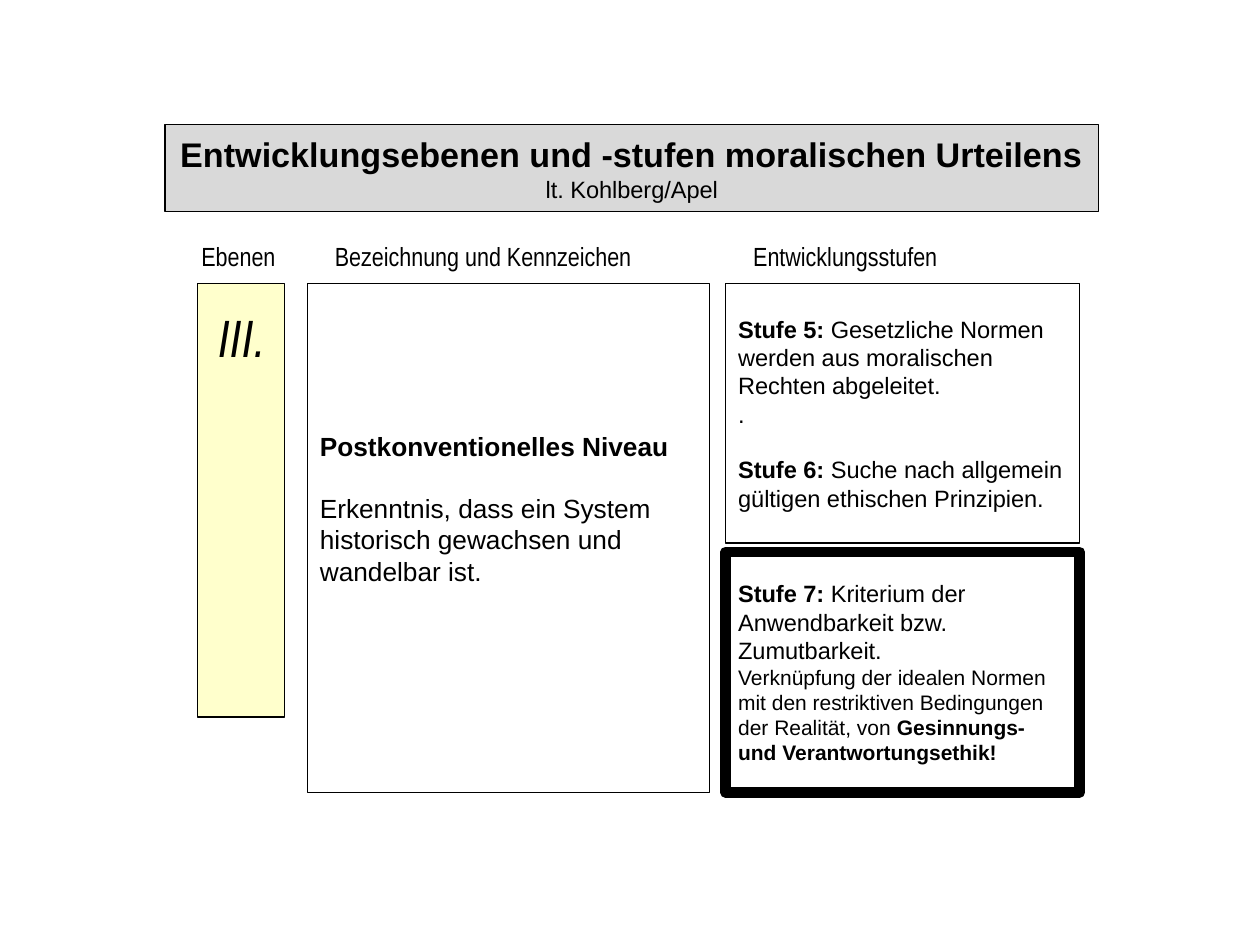
import pptx
import pptx.util
import pptx.dml.color
import pptx.enum.shapes
import pptx.enum.text
from dataclasses import dataclass

Inches = pptx.util.Inches
Pt = pptx.util.Pt
ANCHOR = pptx.enum.text.MSO_ANCHOR
ALIGN = pptx.enum.text.PP_ALIGN


@dataclass
class Theme:
    ink: str = "000000"
    paper: str = "FFFFFF"
    gray: str = "D9D9D9"
    cream: str = "FFFFCC"
    sans: str = "Arial"
    slim: str = "Arial Narrow"
    head: float = 19.5
    level: float = 30
    lead: float = 15
    body: float = 13.5
    note: float = 12
    thin: float = 0.75
    thick: float = 6


look = Theme()
LINE = 1.15

title = [[("Entwicklungsebenen und -stufen moralischen Urteilens", look.head, "b"),
          ("\n", look.head, ""),
          ("lt. Kohlberg/Apel", look.body, "")]]
labels = [("Ebenen", 1.5, 1), ("Bezeichnung und Kennzeichen", 2.56, 2.94),
          ("Entwicklungsstufen", 5.88, 2.94)]
level = [[("III.", look.level, "i")]]
stage = [[("Postkonventionelles Niveau", look.lead, "b")],
         [("Erkenntnis, dass ein System historisch gewachsen und wandelbar ist.",
           look.lead, "")]]
steps = [[("Stufe 5: ", look.body, "b"),
          ("Gesetzliche Normen werden aus moralischen Rechten abgeleitet. ", look.body, ""),
          ("\n", look.body, ""),
          (".", look.body, "")],
         [("Stufe 6: ", look.body, "b"),
          ("Suche nach allgemein gültigen ethischen Prinzipien.", look.body, "")]]
final = [[("Stufe 7:", look.body, "b"),
          (" Kriterium der Anwendbarkeit bzw. Zumutbarkeit.", look.body, "")],
         [("Verknüpfung der idealen Normen mit den restriktiven Bedingungen "
           "der Realität, von ", look.note, ""),
          ("Gesinnungs- und Verantwortungsethik!", look.note, "b")]]

TOP, BASE = 2.25, 6.29
MID_X, MID_W = 2.44, 3.19
STEP_X, STEP_W, STEP_H = 5.76, 2.81, 2.06
END_Y = 4.38


def color(code):
    return pptx.dml.color.RGBColor.from_string(code)


def place(shape, x, y, w, h):
    shape.left, shape.top = Inches(x), Inches(y)
    shape.width, shape.height = Inches(w), Inches(h)


def paint(shape, fill, width):
    shape.fill.solid()
    shape.fill.fore_color.rgb = color(fill)
    if width:
        shape.line.color.rgb = color(look.ink)
        shape.line.width = Pt(width)
    else:
        shape.line.fill.background()


def write(shape, paras, face=look.sans, align=ALIGN.LEFT, anchor=ANCHOR.MIDDLE, gap=0):
    frame = shape.text_frame
    frame.word_wrap = True
    frame.vertical_anchor = anchor
    for n, runs in enumerate(paras):
        para = frame.paragraphs[0] if n == 0 else frame.add_paragraph()
        para.alignment = align
        para.space_before = Pt(gap if n else 0)
        for text, size, style in runs:
            if text == "\n":
                para.add_line_break()
                continue
            run = para.add_run()
            run.text = text
            font = run.font
            font.name, font.size = face, Pt(size)
            font.bold, font.italic = "b" in style, "i" in style
            font.color.rgb = color(look.ink)
    return frame


def box(slide, x, y, w, h, fill=look.paper, width=look.thin):
    kind = pptx.enum.shapes.MSO_SHAPE.RECTANGLE
    shape = slide.shapes.add_shape(kind, Inches(x), Inches(y), Inches(w), Inches(h))
    shape.shadow.inherit = False
    paint(shape, fill, width)
    return shape


def main():
    deck = pptx.Presentation()
    deck.slide_width, deck.slide_height = Inches(10), Inches(7.5)
    slide = deck.slides.add_slide(deck.slide_layouts[5])

    head = slide.shapes.title
    place(head, 1.31, 0.99, 7.41, 0.69)
    paint(head, look.gray, look.thin)
    frame = write(head, title, align=ALIGN.CENTER)
    frame.margin_left = frame.margin_right = Inches(0.07)
    frame.margin_top = frame.margin_bottom = Inches(0.04)

    frame = write(box(slide, MID_X, TOP, MID_W, BASE - TOP), stage, gap=look.lead * LINE)
    frame.margin_bottom = Inches(0.52)

    write(box(slide, STEP_X, TOP, STEP_W, STEP_H), steps, gap=look.body * LINE)

    box(slide, 1.57, TOP, 0.69, 3.44, look.cream)
    write(box(slide, 1.63, 2.37, 0.62, 1.11, look.cream, 0), level,
          face=look.slim, anchor=ANCHOR.TOP)

    write(box(slide, STEP_X, END_Y, STEP_W, BASE - END_Y, width=look.thick), final)

    for text, x, w in labels:
        label = slide.shapes.add_textbox(Inches(x), Inches(1.86), Inches(w), Inches(0.35))
        write(label, [[(text, look.lead, "")]], face=look.slim, anchor=ANCHOR.TOP)

    deck.save("out.pptx")


if __name__ == "__main__":
    main()
